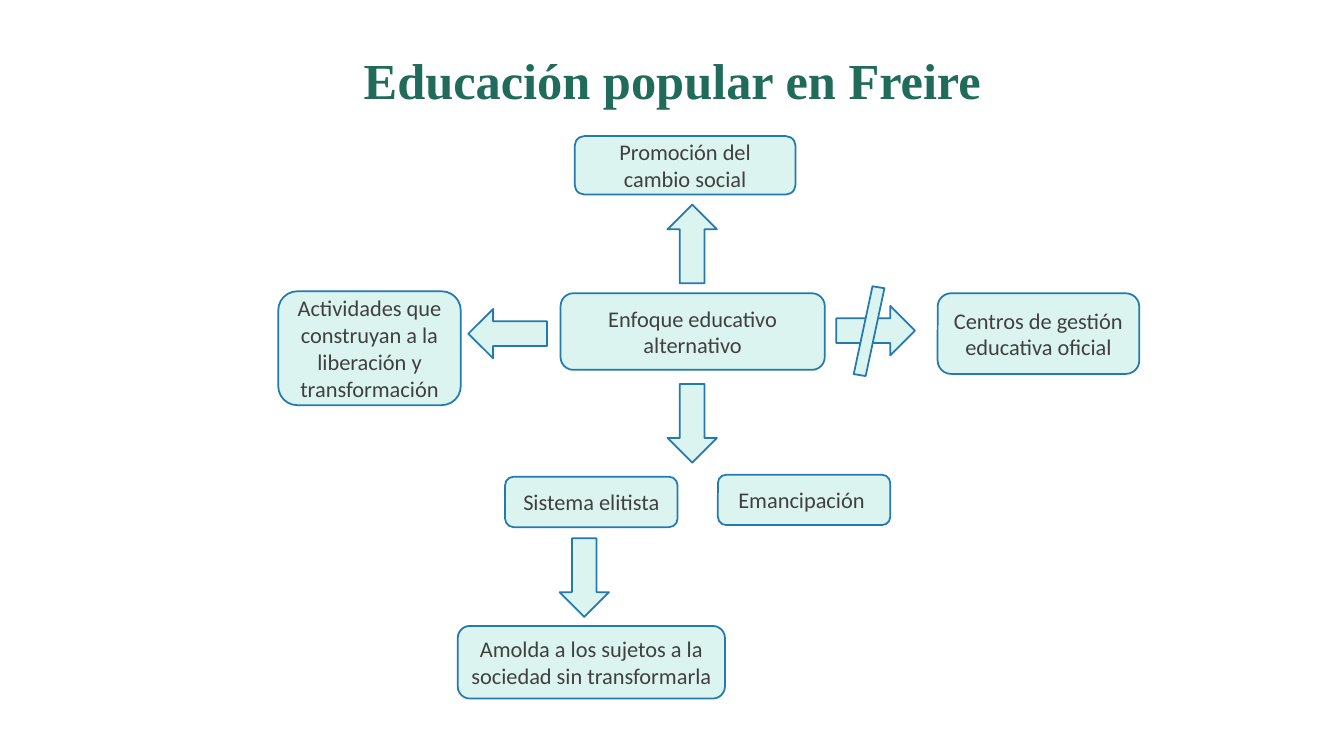
import pptx
import pptx.dml.color
import pptx.enum.shapes
import pptx.enum.text
import pptx.util

Inches = pptx.util.Inches
Shape = pptx.enum.shapes.MSO_SHAPE


def color(value):
    return pptx.dml.color.RGBColor.from_string(value)


class ConceptMap:
    fill = "DBF4EF"
    line = "2379B0"
    ink = "404040"
    title_ink = "206B5A"

    def __init__(self, page):
        self.page = page

    def label(self, shape, words, font, size, ink, bold=False):
        frame = shape.text_frame
        frame.word_wrap = True
        frame.vertical_anchor = pptx.enum.text.MSO_ANCHOR.MIDDLE
        para = frame.paragraphs[0]
        para.text = words
        para.alignment = pptx.enum.text.PP_ALIGN.CENTER
        para.font.name = font
        para.font.size = pptx.util.Pt(size)
        para.font.bold = bold
        para.font.color.rgb = color(ink)
        return para

    def title(self, words, left, top, width, height):
        box = self.page.shapes.add_textbox(Inches(left), Inches(top), Inches(width), Inches(height))
        para = self.label(box, words, "Times New Roman", 36, self.title_ink, True)
        para.line_spacing = 0.9

    def shape(self, kind, left, top, width, height, rotation=0):
        shape = self.page.shapes.add_shape(kind, Inches(left), Inches(top), Inches(width), Inches(height))
        shape.rotation = rotation
        shape.shadow.inherit = False
        shape.fill.solid()
        shape.fill.fore_color.rgb = color(self.fill)
        shape.line.color.rgb = color(self.line)
        shape.line.width = pptx.util.Pt(1.25)
        return shape

    def concept(self, words, left, top, width, height):
        box = self.shape(Shape.ROUNDED_RECTANGLE, left, top, width, height)
        self.label(box, words, "Calibri", 16, self.ink)

    def arrow(self, left, top, rotation):
        self.shape(Shape.DOWN_ARROW, left, top, 0.49, 0.78, rotation)

    def strike(self, left, top, width, height, rotation):
        self.shape(Shape.PARALLELOGRAM, left, top, width, height, rotation)


def main():
    deck = pptx.Presentation()
    deck.slide_width = Inches(13.33)
    deck.slide_height = Inches(7.5)
    concept_map = ConceptMap(deck.slides.add_slide(deck.slide_layouts[6]))

    concept_map.title("Educación popular en Freire", 0.28, 0.2, 12.78, 1.25)
    for concept in (
        ("Enfoque educativo alternativo", 5.56, 2.91, 2.62, 0.76),
        ("Promoción del cambio social", 5.7, 1.35, 2.19, 0.58),
        ("Actividades que construyan a la liberación y transformación", 2.76, 2.89, 1.81, 1.13),
        ("Centros de gestión educativa oficial", 9.3, 2.91, 2, 0.8),
        ("Emancipación ", 7.12, 4.71, 1.71, 0.5),
        ("Sistema elitista", 5.01, 4.73, 1.71, 0.5),
        ("Amolda a los sujetos a la sociedad sin transformarla", 4.54, 6.21, 2.65, 0.72),
    ):
        concept_map.concept(*concept)
    for arrow in (
        (6.62, 2.03, 180),
        (8.44, 2.89, 270),
        (4.79, 2.92, 90),
        (6.62, 3.81, 0),
        (5.55, 5.34, 0),
    ):
        concept_map.arrow(*arrow)
    concept_map.strike(8.54, 2.84, 0.16, 0.89, 9.5)

    deck.save("out.pptx")


if __name__ == "__main__":
    main()
